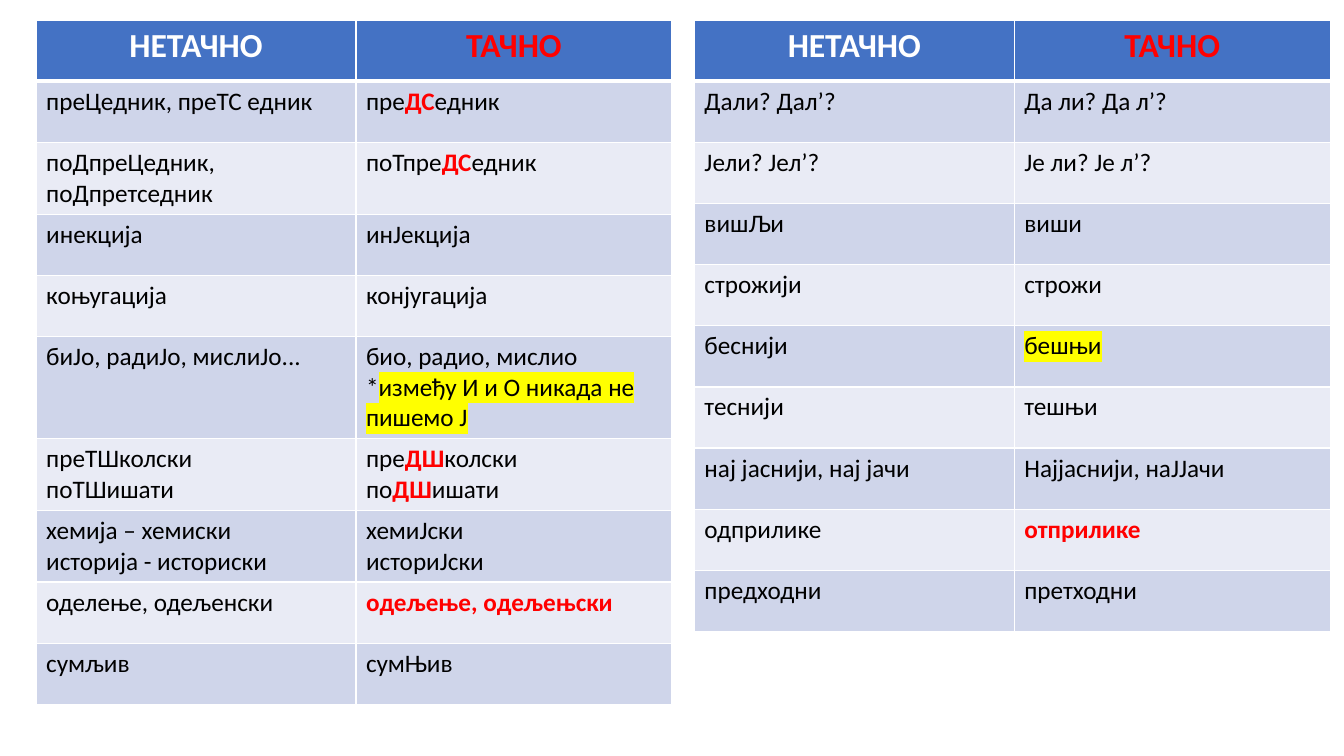
import pptx
import pptx.dml.color
import pptx.enum.text
import pptx.util
from lxml import etree
from pptx.oxml.ns import qn

Cm = pptx.util.Cm
Pt = pptx.util.Pt

COLORS = {
    "header": "4472C4",
    "band_dark": "CFD5EA",
    "band_light": "E9EBF5",
    "border": "FFFFFF",
    "header_text": "FFFFFF",
    "text": "000000",
    "correction": "FF0000",
    "highlight": "FFFF00",
}
FONT = "Calibri"
TOP = Cm(0.51)
ROW_HEIGHT = Cm(1.54)
COLUMN_WIDTHS = (Cm(8.06), Cm(7.96))
HEADINGS = (("НЕТАЧНО", "header_text"), ("ТАЧНО", "correction"))


def red(text):
    return text, "correction"


def marked(text):
    return text, "highlight"


LEFT_WORDS = [
    (["преЦедник, преТС едник"], [["пре", red("ДС"), "едник"]]),
    (["поДпреЦедник, поДпретседник"], [["поТпре", red("ДС"), "едник"]]),
    (["инекција"], ["инЈекција"]),
    (["коњугација"], ["конјугација"]),
    (["биЈо, радиЈо, мислиЈо..."],
     ["био, радио, мислио", ["*", marked("између И и О никада не пишемо Ј")]]),
    (["преТШколски", "поТШишати"],
     [["пре", red("ДШ"), "колски"], ["по", red("ДШ"), "ишати"]]),
    (["хемија – хемиски", "историја - историски"], ["хемиЈски", "историЈски"]),
    (["оделење, одељенски"], [[red("одељење, одељењски")]]),
    (["сумљив"], ["сумЊив"]),
]
RIGHT_WORDS = [
    (["Дали? Дал’?"], ["Да ли? Да л’?"]),
    (["Јели? Јел’?"], ["Је ли? Је л’?"]),
    (["вишЉи"], ["виши"]),
    (["строжији"], ["строжи"]),
    (["беснији"], [[marked("бешњи")]]),
    (["теснији"], ["тешњи"]),
    (["нај јаснији, нај јачи"], ["Најјаснији, наЈЈачи"]),
    (["одприлике"], [[red("отприлике")]]),
    (["предходни"], ["претходни"]),
]


def rgb(name):
    return pptx.dml.color.RGBColor.from_string(COLORS[name])


def style_cell(cell, fill, top=1, bottom=1):
    properties = cell._tc.get_or_add_tcPr()
    for side, width in (("L", 1), ("R", 1), ("T", top), ("B", bottom)):
        line = etree.SubElement(properties, qn(f"a:ln{side}"), w=str(Pt(width)))
        solid = etree.SubElement(line, qn("a:solidFill"))
        etree.SubElement(solid, qn("a:srgbClr"), val=COLORS["border"])
    cell.fill.solid()
    cell.fill.fore_color.rgb = rgb(fill)


def style_paragraph(para, size, color, bold):
    para.font.name = FONT
    para.font.size = Pt(size)
    para.font.bold = bold
    para.font.color.rgb = rgb(color)


def add_span(para, text, style=None):
    span = para.add_run()
    span.text = text
    if style == "correction":
        span.font.bold = True
        span.font.color.rgb = rgb(style)
    elif style == "highlight":
        highlight = etree.SubElement(span._r.get_or_add_rPr(), qn("a:highlight"))
        etree.SubElement(highlight, qn("a:srgbClr"), val=COLORS[style])


def fill_heading(cell, text, color):
    style_cell(cell, "header", bottom=3)
    para = cell.text_frame.paragraphs[0]
    para.alignment = pptx.enum.text.PP_ALIGN.CENTER
    style_paragraph(para, 24, color, True)
    add_span(para, text)


def fill_words(cell, lines):
    frame = cell.text_frame
    for index, line in enumerate(lines):
        para = frame.add_paragraph() if index else frame.paragraphs[0]
        style_paragraph(para, 18, "text", False)
        for part in [line] if isinstance(line, str) else line:
            add_span(para, *([part] if isinstance(part, str) else part))


def add_word_table(page, left, top, words):
    count = len(words) + 1
    table = page.shapes.add_table(
        count, 2, left, top, sum(COLUMN_WIDTHS), ROW_HEIGHT * count
    ).table
    for column, width in zip(table.columns, COLUMN_WIDTHS):
        column.width = width
    for row in table.rows:
        row.height = ROW_HEIGHT
    for column, (text, color) in enumerate(HEADINGS):
        fill_heading(table.cell(0, column), text, color)
    for row, pair in enumerate(words, start=1):
        band = "band_dark" if row % 2 else "band_light"
        for column, lines in enumerate(pair):
            cell = table.cell(row, column)
            style_cell(cell, band, top=3 if row == 1 else 1)
            fill_words(cell, lines)


def main():
    deck = pptx.Presentation()
    deck.slide_width = Cm(33.87)
    deck.slide_height = Cm(19.05)
    page = deck.slides.add_slide(deck.slide_layouts[6])
    add_word_table(page, Cm(0.91), TOP, LEFT_WORDS)
    add_word_table(page, Cm(17.5), TOP, RIGHT_WORDS)
    deck.save("out.pptx")


if __name__ == "__main__":
    main()
